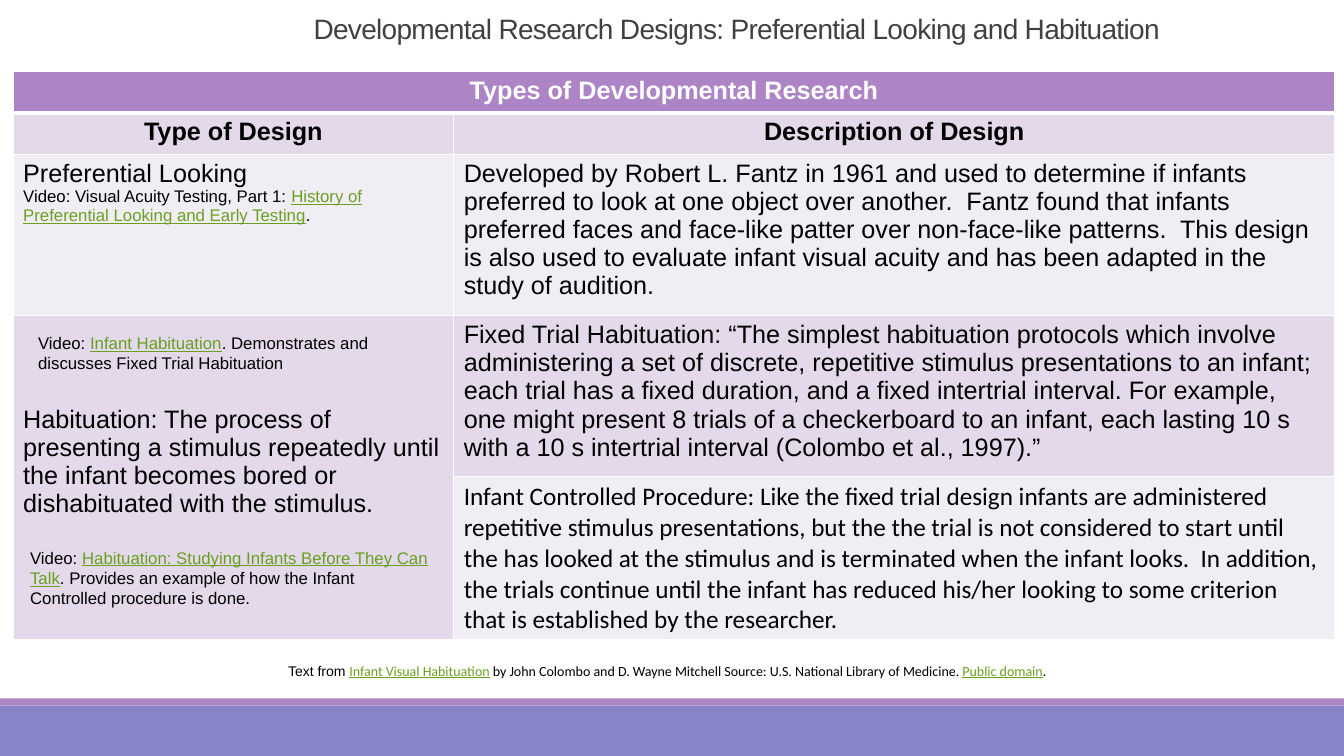
from lxml import etree
from pptx import Presentation
from pptx.dml.color import RGBColor
from pptx.enum import shapes, text
from pptx.oxml import ns
from pptx.util import Inches, Pt

COLORS = {
    "band": "8784C7", "purple": "AD84C6", "lilac": "E3D9EA", "pale": "F1EDF5",
    "title": "404040", "body": "000000", "link": "69A020", "white": "FFFFFF",
}


def color(name):
    return RGBColor.from_string(COLORS[name])


def add_runs(paragraph, parts, size, font="Arial", ink="body", bold=False):
    """Add runs; every second part is shown as an underlined link."""
    for index, part in enumerate(parts):
        linked = index % 2 == 1
        run = paragraph.add_run()
        run.text = part
        run.font.size = Pt(size)
        run.font.name = font
        run.font.bold = bold
        run.font.underline = linked
        run.font.color.rgb = color("link" if linked else ink)


presentation = Presentation()
presentation.slide_width = Inches(13.33)
presentation.slide_height = Inches(7.5)
slide = presentation.slides.add_slide(presentation.slide_layouts[6])

# Bottom bands
for top, height, fill in [(7, 0.5, "band"), (6.93, 0.07, "purple")]:
    band = slide.shapes.add_shape(shapes.MSO_SHAPE.RECTANGLE, 0, Inches(top),
                                  presentation.slide_width, Inches(height))
    band.shadow.inherit = False
    band.fill.solid()
    band.fill.fore_color.rgb = color(fill)
    band.line.fill.background()

# Title
title = slide.shapes.add_textbox(Inches(2.69), Inches(0.1), Inches(9.23), Inches(0.4))
title.text_frame.word_wrap = True
title.text_frame.vertical_anchor = text.MSO_ANCHOR.BOTTOM
paragraph = title.text_frame.paragraphs[0]
paragraph.alignment = text.PP_ALIGN.CENTER
paragraph.line_spacing = 0.85
add_runs(paragraph, ["Developmental Research Designs: Preferential Looking and Habituation"],
         20, ink="title")
paragraph.runs[0].font._element.set("spc", "-50")

# Table grid
row_heights = [0.41, 0.41, 1.5, 1.5, 1.62]
column_widths = [4.37, 8.74]
table = slide.shapes.add_table(len(row_heights), len(column_widths), Inches(0.13), Inches(0.71),
                               Inches(sum(column_widths)), Inches(sum(row_heights))).table
for row, height in zip(table.rows, row_heights):
    row.height = Inches(height)
for column, width in zip(table.columns, column_widths):
    column.width = Inches(width)
table.cell(0, 0).merge(table.cell(0, 1))
table.cell(3, 0).merge(table.cell(4, 0))

# Cell borders and fills
row_fills = ["purple", "lilac", "pale", "lilac", "pale"]
for row_index, fill in enumerate(row_fills):
    for column_index in range(len(column_widths)):
        cell = table.cell(row_index, column_index)
        properties = cell._tc.get_or_add_tcPr()
        for side in ["lnL", "lnR", "lnT", "lnB"]:
            thick = (row_index, side) in [(0, "lnB"), (1, "lnT")]
            line = etree.SubElement(properties, ns.qn(f"a:{side}"), w=str(Pt(3 if thick else 1)))
            solid = etree.SubElement(line, ns.qn("a:solidFill"))
            etree.SubElement(solid, ns.qn("a:srgbClr"), val=COLORS["white"])
        cell.fill.solid()
        cell.fill.fore_color.rgb = color(fill)
table.cell(4, 0).fill.fore_color.rgb = color("lilac")

# Headings
for row_index, column_index, heading, ink in [
    (0, 0, "Types of Developmental Research", "white"),
    (1, 0, "Type of Design", "body"),
    (1, 1, "Description of Design", "body"),
]:
    paragraph = table.cell(row_index, column_index).text_frame.paragraphs[0]
    paragraph.alignment = text.PP_ALIGN.CENTER
    add_runs(paragraph, [heading], 18, ink=ink, bold=True)

# Designs and descriptions
for row_index, column_index, font, body in [
    (2, 0, "Arial", "Preferential Looking"),
    (2, 1, "Arial",
     "Developed by Robert L. Fantz in 1961 and used to determine if infants preferred to look at "
     "one object over another.  Fantz found that infants preferred faces and face-like patter over "
     "non-face-like patterns.  This design is also used to evaluate infant visual acuity and has "
     "been adapted in the study of audition."),
    (3, 0, "Arial",
     "Habituation: The process of presenting a stimulus repeatedly until the infant becomes bored "
     "or dishabituated with the stimulus."),
    (3, 1, "Arial",
     "Fixed Trial Habituation: “The simplest habituation protocols which involve administering a "
     "set of discrete, repetitive stimulus presentations to an infant; each trial has a fixed "
     "duration, and a fixed intertrial interval. For example, one might present 8 trials of a "
     "checkerboard to an infant, each lasting 10 s with a 10 s intertrial interval "
     "(Colombo et al., 1997).”"),
    (4, 1, "Calibri",
     "Infant Controlled Procedure: Like the fixed trial design infants are administered repetitive "
     "stimulus presentations, but the the trial is not considered to start until the has looked at "
     "the stimulus and is terminated when the infant looks.  In addition, the trials continue until "
     "the infant has reduced his/her looking to some criterion that is established by the "
     "researcher."),
]:
    add_runs(table.cell(row_index, column_index).text_frame.paragraphs[0], [body], 18, font)
add_runs(table.cell(2, 0).text_frame.add_paragraph(),
         ["Video: Visual Acuity Testing, Part 1: ",
          "History of Preferential Looking and Early Testing", "."], 12)
table.cell(3, 0).margin_top = Inches(0.89)

# Video notes over the habituation cell
for left, top, width, height, parts in [
    (0.2, 5.38, 4.19, 0.71,
     ["Video: ", "Habituation: Studying Infants Before They Can Talk",
      ". Provides an example of how the Infant Controlled procedure is done."]),
    (0.28, 3.25, 4.04, 0.5,
     ["Video: ", "Infant Habituation",
      ". Demonstrates and discusses Fixed Trial Habituation"]),
]:
    note = slide.shapes.add_textbox(Inches(left), Inches(top), Inches(width), Inches(height))
    note.text_frame.word_wrap = True
    note.text_frame.auto_size = text.MSO_AUTO_SIZE.SHAPE_TO_FIT_TEXT
    add_runs(note.text_frame.paragraphs[0], parts, 12)

# Source line
source = slide.shapes.add_textbox(Inches(2.76), Inches(6.52), Inches(7.81), Inches(0.27))
source.text_frame.word_wrap = False
source.text_frame.auto_size = text.MSO_AUTO_SIZE.SHAPE_TO_FIT_TEXT
paragraph = source.text_frame.paragraphs[0]
add_runs(paragraph,
         ["Text from ", "Infant Visual Habituation",
          " by John Colombo and D. Wayne Mitchell Source: U.S. National Library of Medicine. ",
          "Public domain", "."], 10, "Calibri")
paragraph.runs[0].font.name = "Arial"

presentation.save("out.pptx")
